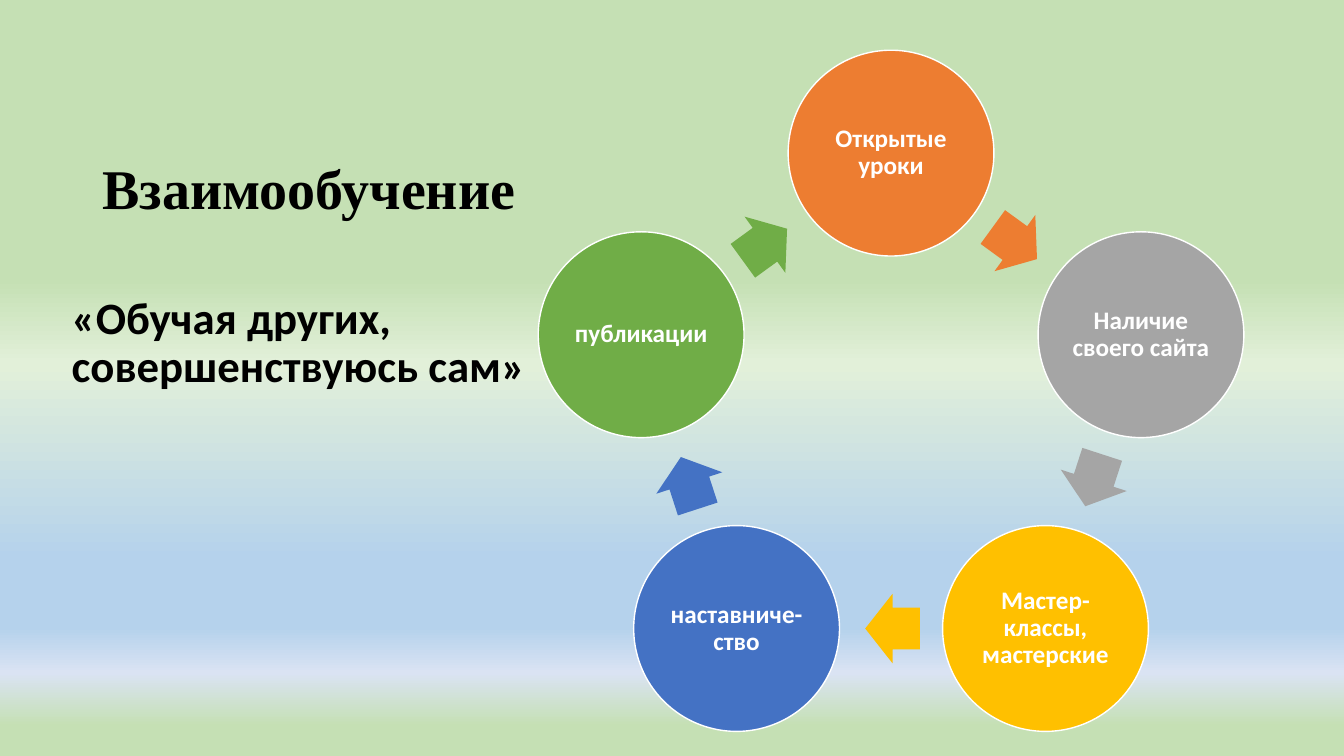
"""Builds a slide on mutual learning with a five-step cycle."""
from copy import deepcopy
from math import cos, radians, sin

from lxml import etree
from pptx import Presentation
from pptx.dml.color import RGBColor
from pptx.enum import shapes, text
from pptx.oxml import ns
from pptx.util import Pt

BLACK = RGBColor(0x00, 0x00, 0x00)
WHITE = RGBColor(0xFF, 0xFF, 0xFF)
ORANGE = RGBColor(0xED, 0x7D, 0x31)
GRAY = RGBColor(0xA5, 0xA5, 0xA5)
GOLD = RGBColor(0xFF, 0xC0, 0x00)
BLUE = RGBColor(0x44, 0x72, 0xC4)
GREEN = RGBColor(0x70, 0xAD, 0x47)
LEAF = RGBColor(0xC5, 0xE0, 0xB4)
MINT = RGBColor(0xE2, 0xF0, 0xD9)
SKY = RGBColor(0xB5, 0xD2, 0xEC)
MIST = RGBColor(0xDA, 0xE3, 0xF3)

STOPS = [(37, LEAF), (48, MINT), (74, SKY), (83, SKY), (89, MIST), (96, LEAF)]
STEPS = [
    ("Открытые уроки", ORANGE),
    ("Наличие своего сайта", GRAY),
    ("Мастер-классы, мастерские", GOLD),
    ("наставниче-ство", BLUE),
    ("публикации", GREEN),
]


class Deck:
    sans, serif = "Calibri", "Times New Roman"

    def __init__(self):
        self.prs = Presentation()
        self.prs.slide_width, self.prs.slide_height = Pt(960), Pt(540)
        self.slide = self.prs.slides.add_slide(self.prs.slide_layouts[1])

    def back(self, stops):
        fill = self.slide.background.fill
        fill.gradient()
        fill.gradient_angle = 270
        grad = self.slide.element.find(".//" + ns.qn("a:gsLst"))
        base = grad[0]
        for old in list(grad):
            grad.remove(old)
        for _ in stops:
            grad.append(deepcopy(base))
        for stop, (pos, color) in zip(fill.gradient_stops, stops):
            stop.position = pos / 100
            stop.color.rgb = color

    def words(self, shape, words, size, font, color, align, anchor):
        frame = shape.text_frame
        frame.word_wrap = True
        frame.auto_size = text.MSO_AUTO_SIZE.NONE
        frame.vertical_anchor = anchor
        para = frame.paragraphs[0]
        para.alignment = align
        para.line_spacing = 0.9
        run = para.add_run()
        run.text = words
        run.font.size, run.font.name, run.font.bold = Pt(size), font, True
        run.font.color.rgb = color
        return frame

    def place(self, shape, left, top, width, height):
        shape.left, shape.top = Pt(left), Pt(top)
        shape.width, shape.height = Pt(width), Pt(height)

    def title(self, words, *box):
        shape = self.slide.shapes.title
        self.place(shape, *box)
        self.words(shape, words, 40, self.serif, BLACK,
                   text.PP_ALIGN.LEFT, text.MSO_ANCHOR.BOTTOM)

    def body(self, words, *box):
        shape = self.slide.placeholders[1]
        self.place(shape, *box)
        frame = self.words(shape, words, 32, self.sans, BLACK,
                           text.PP_ALIGN.LEFT, text.MSO_ANCHOR.TOP)
        frame.margin_top = Pt(49)
        para = frame.paragraphs[0]
        para.space_before = Pt(10)
        props = para._p.get_or_add_pPr()
        props.set("marL", "0")
        props.set("indent", "0")
        etree.SubElement(props, ns.qn("a:buNone"))

    def shape(self, kind, mid, size, color):
        (x, y), (w, h) = mid, size
        shape = self.slide.shapes.add_shape(
            kind, Pt(x - w / 2), Pt(y - h / 2), Pt(w), Pt(h))
        shape.shadow.inherit = False
        shape.fill.solid()
        shape.fill.fore_color.rgb = color
        return shape

    def disc(self, words, mid, color):
        disc = self.shape(shapes.MSO_SHAPE.OVAL, mid, (147, 147), color)
        disc.line.color.rgb, disc.line.width = WHITE, Pt(1)
        frame = self.words(disc, words, 18, self.sans, WHITE,
                           text.PP_ALIGN.CENTER, text.MSO_ANCHOR.MIDDLE)
        frame.margin_left = frame.margin_right = Pt(2)
        frame.margin_top = frame.margin_bottom = Pt(2)

    def arrow(self, mid, turn, color):
        arrow = self.shape(shapes.MSO_SHAPE.RIGHT_ARROW, mid, (39, 49.6), color)
        arrow.line.fill.background()
        arrow.adjustments[0], arrow.adjustments[1] = 0.6, 0.5
        arrow.rotation = turn

    def cycle(self, steps, x, y, radius):
        step = 360 / len(steps)
        near = radius * cos(radians(step / 2))
        for i, (words, color) in enumerate(steps):
            turn = i * step
            a, b = radians(turn), radians(turn + step / 2)
            self.disc(words, (x + radius * sin(a), y - radius * cos(a)), color)
            mid = (x + near * sin(b) - cos(b), y - near * cos(b) - sin(b))
            self.arrow(mid, turn + step / 2, color)


def main():
    deck = Deck()
    deck.back(STOPS)
    deck.title("Взаимообучение", 66, 36, 310, 126)
    deck.body("«Обучая других, совершенствуюсь сам»", 44, 162, 348, 300)
    deck.cycle(STEPS, 636.5, 297.1, 187.7)
    deck.prs.save("out.pptx")


if __name__ == "__main__":
    main()
